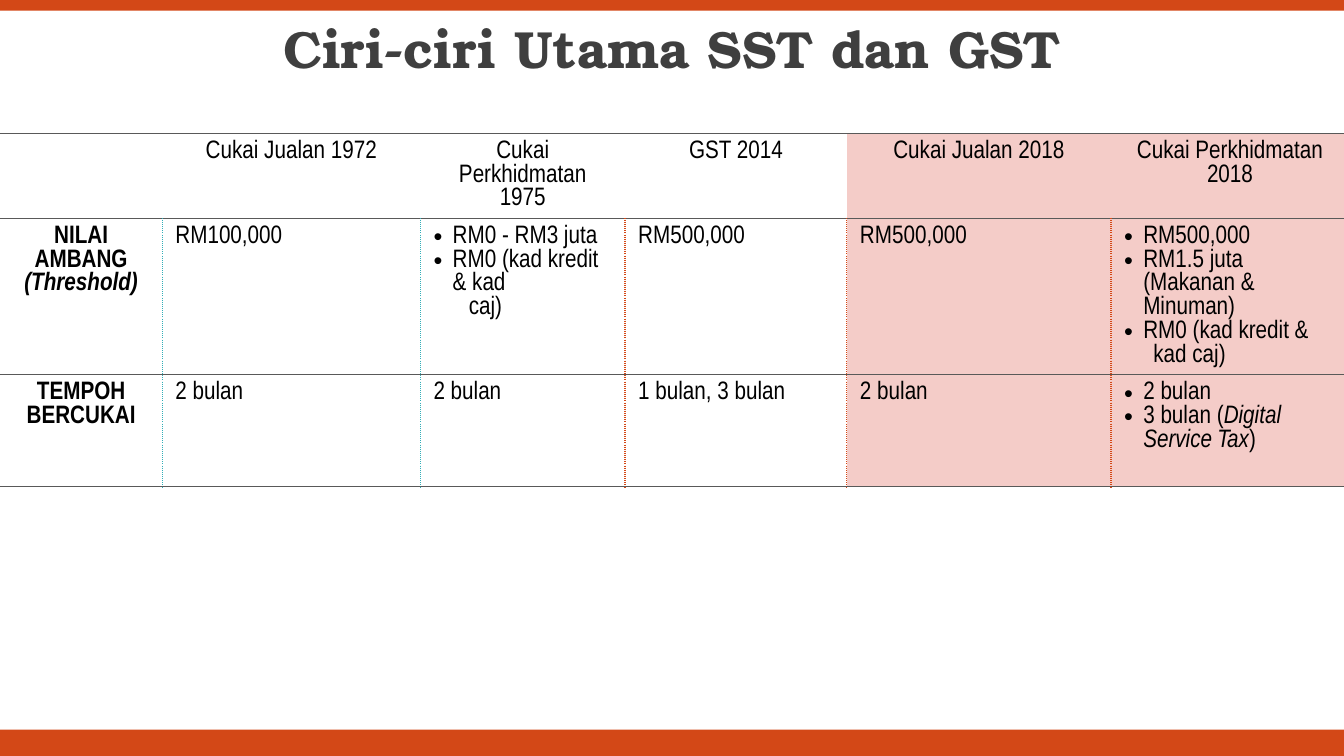
import dataclasses

import pptx
import pptx.dml.color
import pptx.enum.shapes
import pptx.enum.text
import pptx.oxml
import pptx.oxml.ns
import pptx.util

Inches = pptx.util.Inches
Pt = pptx.util.Pt
Align = pptx.enum.text.PP_ALIGN
Anchor = pptx.enum.text.MSO_ANCHOR
WIDTH, HEIGHT = Inches(13.33), Inches(7.5)
NO_GRID_STYLE = "{2D5ABB26-0587-4C30-8999-92F81FD0307C}"


@dataclasses.dataclass(frozen=True)
class Theme:
    accent: str = "D34817"
    title: str = "3F3F3F"
    text: str = "000000"
    paper: str = "FFFFFF"
    highlight: str = "F4CCC8"
    rule: str = "595959"
    teal: str = "32AEB8"
    title_font: str = "TeX Gyre Bonum"
    table_font: str = "Arial Narrow"
    title_size: float = 37.3
    table_size: float = 18


@dataclasses.dataclass(frozen=True)
class Line:
    """One paragraph; text between asterisks is italic."""
    text: str
    bullet: bool = False
    indent: float = 0


THEME = Theme()
COLUMN_WIDTHS = [1.61, 2.56, 2.03, 2.2, 2.62, 2.36]
ROW_HEIGHTS = [0.83, 1.55, 1.11]
FIRST_HIGHLIGHTED_COLUMN = 4
DIVIDERS = {1: THEME.teal, 3: THEME.accent, 4: THEME.accent}


def bullet(text):
    return Line(text, bullet=True, indent=0.19)


ROWS = [
    [[], [Line("Cukai Jualan 1972")], [Line("Cukai Perkhidmatan 1975")],
     [Line("GST 2014")], [Line("Cukai Jualan 2018")], [Line("Cukai Perkhidmatan 2018")]],
    [[Line("NILAI"), Line("AMBANG"), Line("*(Threshold)*")],
     [Line("RM100,000")],
     [bullet("RM0 - RM3 juta"), bullet("RM0 (kad kredit & kad"), Line("caj)", indent=0.35)],
     [Line("RM500,000")],
     [Line("RM500,000")],
     [bullet("RM500,000"), bullet("RM1.5 juta (Makanan & Minuman)"),
      bullet("RM0 (kad kredit &"), Line("kad caj)", indent=0.29)]],
    [[Line("TEMPOH"), Line("BERCUKAI")],
     [Line("2 bulan")], [Line("2 bulan")], [Line("1 bulan, 3 bulan")], [Line("2 bulan")],
     [bullet("2 bulan"), bullet("3 bulan (*Digital Service Tax*)")]],
]


def apply_format(target, values):
    for name, value in values.items():
        setattr(target, name, value)


def set_font(font, color, **values):
    apply_format(font, values)
    font.color.rgb = pptx.dml.color.RGBColor.from_string(color)


def set_fill(fill, color):
    fill.solid()
    fill.fore_color.rgb = pptx.dml.color.RGBColor.from_string(color)


def add_bar(slide, top, height):
    """Draw a full-width band; top and height are shares of the slide height."""
    bar = slide.shapes.add_shape(pptx.enum.shapes.MSO_SHAPE.RECTANGLE, 0,
                                 int(HEIGHT * top), WIDTH, int(HEIGHT * height))
    bar.shadow.inherit = False
    set_fill(bar.fill, THEME.accent)
    bar.line.fill.background()


def format_title(slide, text):
    title = slide.shapes.title
    apply_format(title, {"left": 0, "top": int(HEIGHT * 0.012),
                         "width": WIDTH, "height": int(HEIGHT * 0.112)})
    frame = title.text_frame
    frame.text = text
    apply_format(frame, {"vertical_anchor": Anchor.MIDDLE, "word_wrap": True,
                         "auto_size": pptx.enum.text.MSO_AUTO_SIZE.NONE})
    paragraph = frame.paragraphs[0]
    apply_format(paragraph, {"alignment": Align.CENTER, "line_spacing": 0.9})
    set_font(paragraph.runs[0].font, THEME.title, name=THEME.title_font,
             size=Pt(THEME.title_size), bold=True)


def add_xml(parent, xml):
    namespace = pptx.oxml.ns.nsdecls("a")
    parent.append(pptx.oxml.parse_xml(xml.replace("/>", f" {namespace}/>", 1)
                                      if xml.count("<") == 1
                                      else xml.replace(">", f" {namespace}>", 1)))


def add_border(cell, side, color, width, dash):
    add_xml(cell._tc.get_or_add_tcPr(),
            f'<a:ln{side} w="{Pt(width)}"><a:solidFill><a:srgbClr val="{color}"/>'
            f'</a:solidFill><a:prstDash val="{dash}"/></a:ln{side}>')


def add_borders(cell, row, column):
    if row:
        for side, edge in (("L", column), ("R", column + 1)):
            if edge in DIVIDERS:
                add_border(cell, side, DIVIDERS[edge], 1, "sysDot")
    for side in "TB":
        add_border(cell, side, THEME.rule, 0.75, "solid")


def write_line(paragraph, line, alignment, bold):
    paragraph.alignment = alignment
    properties = paragraph._p.get_or_add_pPr()
    if line.indent:
        properties.set("marL", str(Inches(line.indent)))
        properties.set("indent", str(-Inches(line.indent) if line.bullet else 0))
    if line.bullet:
        add_xml(properties, f'<a:buClr><a:srgbClr val="{THEME.text}"/></a:buClr>')
        add_xml(properties, '<a:buFont typeface="Arial"/>')
        add_xml(properties, '<a:buChar char="•"/>')
    for index, text in enumerate(line.text.split("*")):
        if text:
            run = paragraph.add_run()
            run.text = text
            set_font(run.font, THEME.text, name=THEME.table_font,
                     size=Pt(THEME.table_size), bold=bold, italic=index % 2 == 1)


def fill_cell(cell, lines, row, column):
    apply_format(cell, {"margin_left": Inches(0.13), "margin_right": Inches(0.13),
                        "margin_top": Inches(0.07), "margin_bottom": Inches(0.07),
                        "vertical_anchor": Anchor.TOP})
    add_borders(cell, row, column)
    highlighted = column >= FIRST_HIGHLIGHTED_COLUMN
    set_fill(cell.fill, THEME.highlight if highlighted else THEME.paper)
    frame = cell.text_frame
    alignment = Align.CENTER if row == 0 or column == 0 else Align.LEFT
    for index, line in enumerate(lines):
        paragraph = frame.add_paragraph() if index else frame.paragraphs[0]
        write_line(paragraph, line, alignment, column == 0)


def add_comparison_table(slide):
    frame = slide.shapes.add_table(len(ROW_HEIGHTS), len(COLUMN_WIDTHS), 0,
                                   int(HEIGHT * 0.176), Inches(sum(COLUMN_WIDTHS)),
                                   Inches(sum(ROW_HEIGHTS)))
    table = frame.table
    apply_format(table, {"first_row": False, "horz_banding": False})
    table._tbl.tblPr.find(pptx.oxml.ns.qn("a:tableStyleId")).text = NO_GRID_STYLE
    for column, width in zip(table.columns, COLUMN_WIDTHS):
        column.width = Inches(width)
    for row, height in zip(table.rows, ROW_HEIGHTS):
        row.height = Inches(height)
    for row, cells in enumerate(ROWS):
        for column, lines in enumerate(cells):
            fill_cell(table.cell(row, column), lines, row, column)


def main():
    presentation = pptx.Presentation()
    apply_format(presentation, {"slide_width": WIDTH, "slide_height": HEIGHT})
    slide = presentation.slides.add_slide(presentation.slide_layouts.get_by_name("Title Only"))
    add_bar(slide, 0.965, 0.035)
    add_bar(slide, 0, 0.014)
    format_title(slide, "Ciri-ciri Utama SST dan GST")
    add_comparison_table(slide)
    presentation.save("out.pptx")


if __name__ == "__main__":
    main()
